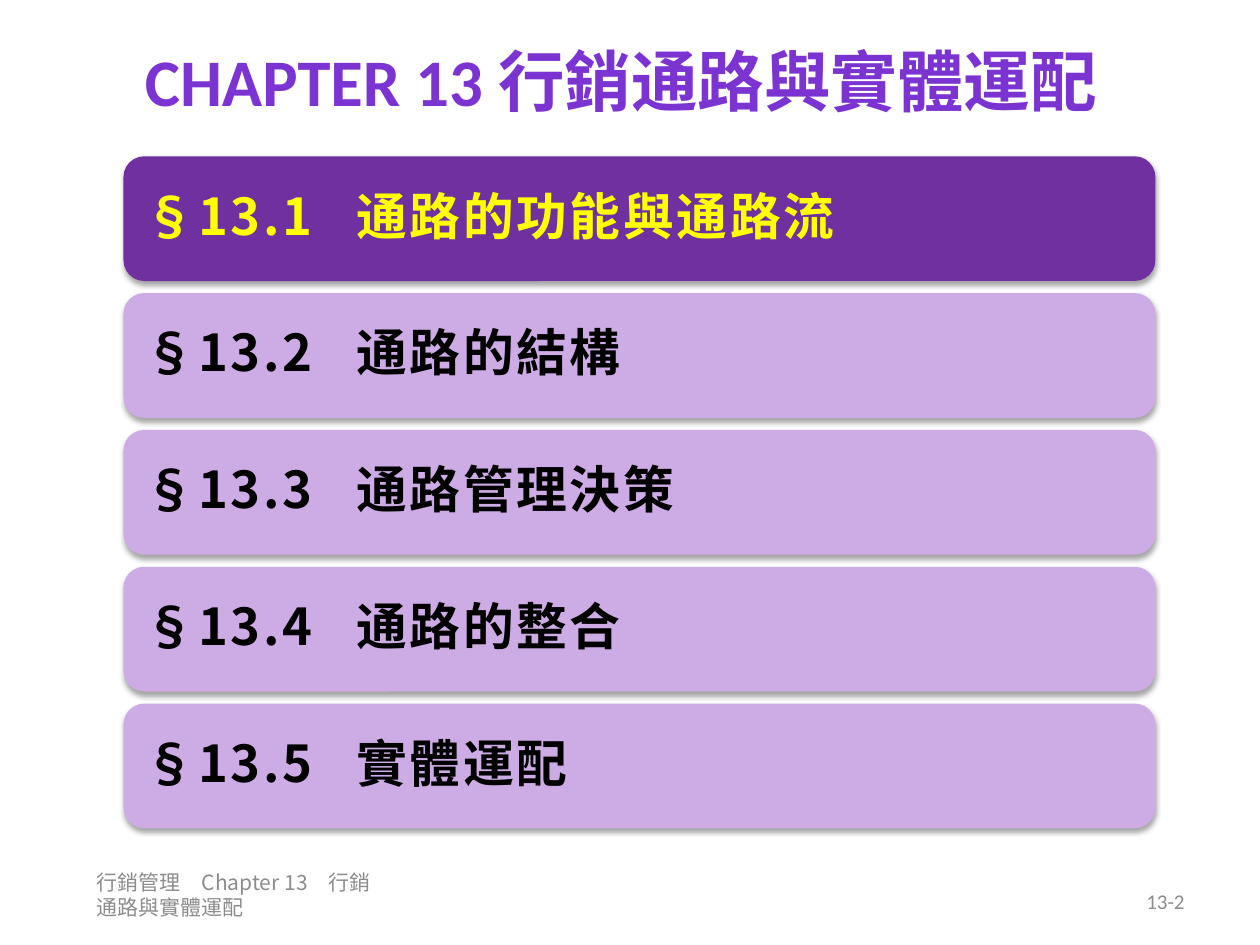
from dataclasses import dataclass

from lxml import etree
from pptx import Presentation
from pptx import util as u
from pptx.dml.color import RGBColor
from pptx.enum import shapes, text
from pptx.oxml import ns

CJK_FONT = "Noto Sans CJK SC"
LATIN_FONT = "Calibri"
GRAY = "8C8C8C"


@dataclass
class Section:
    number: str
    title: str
    fill: str = "CDACE6"
    color: str = "000000"


SECTIONS = [
    Section("§13.1", "通路的功能與通路流", "7030A0", "FFFF00"),
    Section("§13.2", "通路的結構"),
    Section("§13.3", "通路管理決策"),
    Section("§13.4", "通路的整合"),
    Section("§13.5", "實體運配"),
]
BAR_LEFT, BAR_TOP, BAR_WIDTH, BAR_HEIGHT = 0.98, 1.24, 8.19, 0.99
BAR_PITCH = 1.086
TITLE_TAB = 1.68


def rgb(color: str) -> RGBColor:
    return RGBColor.from_string(color)


def add_run(paragraph, content: str, *, size: float, color: str, font: str = LATIN_FONT,
            bold: bool = False, spacing: float = 0) -> None:
    run = paragraph.add_run()
    run.text = content
    run.font.size = u.Pt(size)
    run.font.bold = bold
    run.font.color.rgb = rgb(color)
    run.font.name = font
    properties = run.font._element
    etree.SubElement(properties, ns.qn("a:ea"), typeface=CJK_FONT)
    if spacing:
        properties.set("spc", str(round(spacing * 100)))


def add_label(slide, content: str, left: float, top: float, width: float, height: float, *,
              align=text.PP_ALIGN.LEFT, **run_format) -> None:
    box = slide.shapes.add_textbox(*map(u.Inches, (left, top, width, height)))
    frame = box.text_frame
    frame.word_wrap = True
    frame.vertical_anchor = text.MSO_ANCHOR.MIDDLE
    paragraph = frame.paragraphs[0]
    paragraph.alignment = align
    add_run(paragraph, content, **run_format)


def add_soft_shadow(shape) -> None:
    effects = etree.SubElement(shape._element.spPr, ns.qn("a:effectLst"))
    shadow = etree.SubElement(effects, ns.qn("a:outerShdw"), blurRad=str(u.Pt(3.1)),
                              dist=str(u.Pt(1.8)), dir="5400000", rotWithShape="0")
    color = etree.SubElement(shadow, ns.qn("a:srgbClr"), val="000000")
    etree.SubElement(color, ns.qn("a:alpha"), val="35000")


def add_section(slide, section: Section, top: float) -> None:
    bar = slide.shapes.add_shape(
        shapes.MSO_SHAPE.ROUNDED_RECTANGLE,
        *map(u.Inches, (BAR_LEFT, top, BAR_WIDTH, BAR_HEIGHT)))
    bar.fill.solid()
    bar.fill.fore_color.rgb = rgb(section.fill)
    bar.line.fill.background()
    add_soft_shadow(bar)

    frame = bar.text_frame
    frame.word_wrap = True
    frame.vertical_anchor = text.MSO_ANCHOR.MIDDLE
    frame.margin_left = frame.margin_right = u.Inches(0.12)
    frame.margin_top = frame.margin_bottom = u.Inches(0.12)
    paragraph = frame.paragraphs[0]
    paragraph.alignment = text.PP_ALIGN.LEFT
    paragraph.line_spacing = 0.9
    paragraph.space_after = u.Pt(10)
    tabs = etree.SubElement(paragraph._p.get_or_add_pPr(), ns.qn("a:tabLst"))
    etree.SubElement(tabs, ns.qn("a:tab"), pos=str(u.Inches(TITLE_TAB)), algn="l")
    style = dict(size=29, color=section.color, bold=True, spacing=1.5)
    add_run(paragraph, section.number + "\t", font=CJK_FONT, **style)
    add_run(paragraph, section.title, **style)


def main() -> None:
    presentation = Presentation()
    presentation.slide_width = u.Inches(10)
    presentation.slide_height = u.Inches(7.5)
    slide = presentation.slides.add_slide(presentation.slide_layouts[6])

    # Footer and page number
    add_label(slide, "行銷管理　Chapter 13　行銷通路與實體運配", 0.67, 6.9, 2.44, 0.4,
              size=12, color=GRAY, font=CJK_FONT)
    add_label(slide, "13-2", 7.17, 6.95, 2.33, 0.4,
              align=text.PP_ALIGN.RIGHT, size=12, color=GRAY)

    # Chapter title
    add_label(slide, "CHAPTER 13 行銷通路與實體運配", 0.43, 0.04, 9, 1.19,
              align=text.PP_ALIGN.CENTER, size=38, color="7B34D2", bold=True)

    # Section bars
    for index, section in enumerate(SECTIONS):
        add_section(slide, section, BAR_TOP + index * BAR_PITCH)

    presentation.save("out.pptx")


if __name__ == "__main__":
    main()
